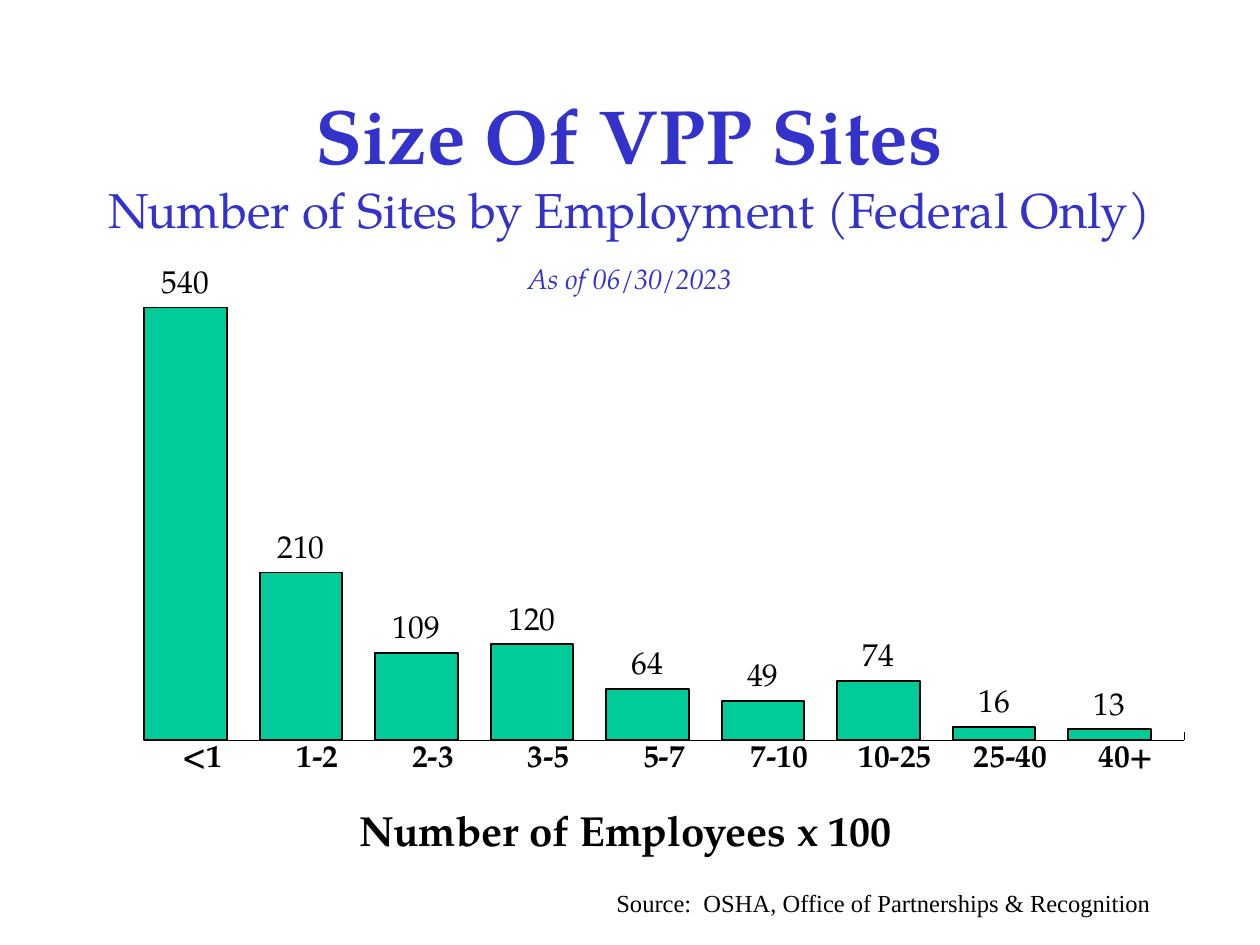
"""Builds the slide on the size of VPP sites by employment."""
from dataclasses import dataclass

from lxml import etree
from pptx import Presentation
from pptx import util as u
from pptx.chart import data as chart_data
from pptx.dml import color
from pptx.enum import chart as charts
from pptx.enum import text
from pptx.oxml import ns

PX = 914400 / 126


def px(length):
    return u.Emu(round(length * PX))


@dataclass(frozen=True)
class Theme:
    ink: str = "000000"
    blue: str = "3333CC"
    green: str = "00CC99"
    lavender: str = "CCCCFF"
    display: str = "TeX Gyre Pagella"
    serif: str = "Times New Roman"
    title: int = 44
    subtitle: int = 28
    axis_title: int = 24
    chart: int = 18
    date: int = 16
    source: int = 14


def style_font(font, size, hue, face, bold=False, italic=False):
    font.size = u.Pt(size)
    font.color.rgb = color.RGBColor.from_string(hue)
    font.name = face
    font.bold = bold
    font.italic = italic


def write_span(para, words, **style):
    span = para.add_run()
    span.text = words
    style_font(span.font, **style)


class PageBuilder:
    def __init__(self, theme, page):
        self.theme = theme
        self.page = page

    def style(self, size, hue=None, face=None, **extra):
        return dict(size=size, hue=hue or self.theme.ink,
                    face=face or self.theme.display, **extra)

    def add_text(self, place, lines, align=text.PP_ALIGN.LEFT,
                 anchor=text.MSO_ANCHOR.TOP, wrap=True):
        box = self.page.shapes.add_textbox(*map(px, place))
        frame = box.text_frame
        frame.word_wrap = wrap
        frame.vertical_anchor = anchor
        para = frame.paragraphs[0]
        para.alignment = align
        for number, (words, style) in enumerate(lines):
            if number:
                para.add_line_break()
            write_span(para, words, **style)

    def add_columns(self, place, categories, series, hues, inner, top):
        values = chart_data.CategoryChartData()
        values.categories = categories
        for name, numbers in series.items():
            values.add_series(name, numbers)
        chart = self.page.shapes.add_chart(
            charts.XL_CHART_TYPE.COLUMN_CLUSTERED, *map(px, place), values).chart
        chart.has_legend = False
        chart.has_title = False
        style_font(chart.font, **self.style(self.theme.chart, bold=True))
        plot = chart.plots[0]
        plot.vary_by_categories = False
        plot.gap_width = 0
        plot.overlap = 80
        for bars, hue in zip(plot.series, hues):
            bars.format.fill.solid()
            bars.format.fill.fore_color.rgb = color.RGBColor.from_string(hue)
            self.draw_line(bars.format.line, 1)
        self.set_axes(chart, top)
        self.set_inner_layout(chart, inner)
        return chart

    def draw_line(self, line, width):
        line.color.rgb = color.RGBColor.from_string(self.theme.ink)
        line.width = u.Pt(width)

    def set_axes(self, chart, top):
        across, up = chart.category_axis, chart.value_axis
        across.major_tick_mark = charts.XL_TICK_MARK.INSIDE
        self.draw_line(across.format.line, 0.25)
        up.minimum_scale, up.maximum_scale = 0, top
        up.has_major_gridlines = False
        up.major_tick_mark = charts.XL_TICK_MARK.NONE
        up.tick_label_position = charts.XL_TICK_LABEL_POSITION.NONE
        up.format.line.fill.background()

    def set_inner_layout(self, chart, inner):
        area = chart.plots[0]._element.getparent()
        for old in area.findall(ns.qn("c:layout")):
            area.remove(old)
        layout = etree.Element(ns.qn("c:layout"))
        manual = etree.SubElement(layout, ns.qn("c:manualLayout"))
        settings = {"layoutTarget": "inner", "xMode": "edge", "yMode": "edge",
                    **dict(zip("xywh", inner))}
        for tag, value in settings.items():
            etree.SubElement(manual, ns.qn(f"c:{tag}")).set("val", str(value))
        area.insert(0, layout)

    def label_bars(self, bars, rounded):
        style = self.style(self.theme.chart)
        labels = bars.data_labels
        labels.show_value = True
        labels.position = charts.XL_LABEL_POSITION.OUTSIDE_END
        style_font(labels.font, **style)
        for index, words in rounded.items():
            label = bars.points[index].data_label
            write_span(label.text_frame.paragraphs[0], words, **style)
            label.position = charts.XL_LABEL_POSITION.OUTSIDE_END


def main():
    deck = Presentation()
    deck.slide_width, deck.slide_height = px(1260), px(945)
    theme = Theme()
    builder = PageBuilder(theme, deck.slides.add_slide(deck.slide_layouts[6]))
    style = builder.style
    centred = dict(align=text.PP_ALIGN.CENTER, anchor=text.MSO_ANCHOR.MIDDLE)

    categories = ["<1", "1-2", "2-3", "3-5", "5-7", "7-10", "10-25", "25-40", "40+"]
    empty = [None] * len(categories)
    chart = builder.add_columns(
        (123, 262, 1061, 543), categories,
        {"Series 1": [543, 210, 109, 120, 64, 49, 74, 16, 13],
         "Series 2": empty, "Series 3": empty},
        (theme.green, theme.blue, theme.lavender),
        inner=(0.02, 0, 0.98, 0.88), top=600)
    builder.label_bars(chart.plots[0].series[0], {0: "540"})

    builder.add_text((94, 84, 1071, 158), [
        ("Size Of VPP Sites", style(theme.title, theme.blue, bold=True)),
        ("Number of Sites by Employment (Federal Only)",
         style(theme.subtitle, theme.blue))], **centred)
    builder.add_text((451, 231, 357, 94), [
        ("As of 06/30/2023", style(theme.date, theme.blue, italic=True))], **centred)
    builder.add_text((347, 798, 580, 63), [
        ("Number of Employees x 100", style(theme.axis_title, bold=True))], wrap=False)
    builder.add_text((604, 882, 645, 42), [
        ("Source:  OSHA, Office of Partnerships & Recognition",
         style(theme.source, face=theme.serif))])
    deck.save("out.pptx")


if __name__ == "__main__":
    main()
